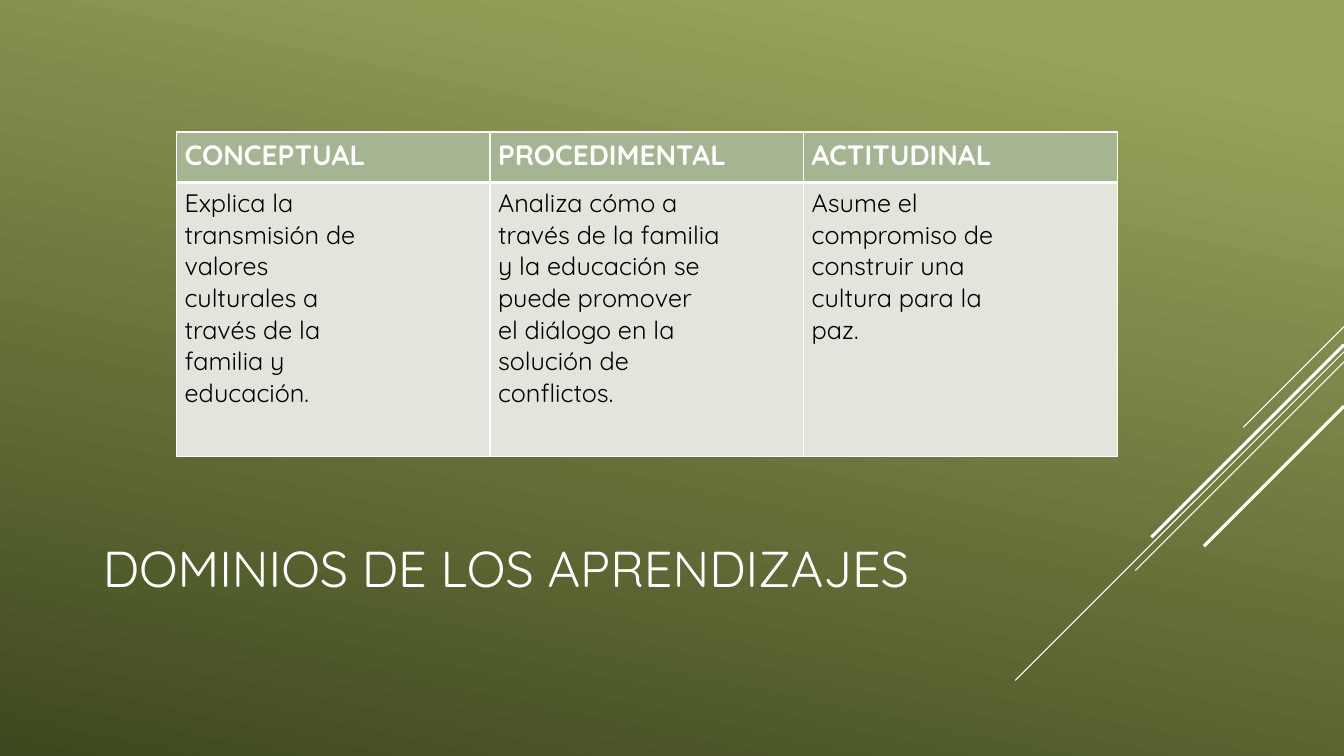
import pptx
import pptx.util
import pptx.dml.color
import pptx.enum.shapes
import pptx.enum.text
import pptx.oxml
import pptx.oxml.ns
from dataclasses import dataclass

TITLE = "DOMINIOS DE LOS APRENDIZAJES"
DOMAINS = {
    "CONCEPTUAL": [
        "Explica la", "transmisión de", "valores", "culturales a",
        "través de la", "familia y", "educación.",
    ],
    "PROCEDIMENTAL": [
        "Analiza cómo a", "través de la familia", "y la educación se",
        "puede promover", "el diálogo en la", "solución de", "conflictos.",
    ],
    "ACTITUDINAL": [
        "Asume el", "compromiso de", "construir una", "cultura para la", "paz.",
    ],
}
# Diagonals: height at the right edge, run down to the left, weight
DIAGONALS = [
    (3.24, 1.00, 0.75),
    (3.49, 3.26, 0.75),
    (3.59, 2.07, 0.75),
    (3.42, 1.91, 2.25),
    (4.03, 1.39, 2.25),
]
WIDTH, HEIGHT = 13.33, 7.5
TITLE_BOX = (0.92, 4.8, 9.33, 1.65)
TABLE_LEFT, TABLE_TOP, COLUMN_WIDTH = 1.75, 1.31, 3.11
ROW_HEIGHTS = (0.5, 2.72)


@dataclass(frozen=True)
class Theme:
    font: str = "Quicksand"
    light: str = "FFFFFF"
    dark: str = "000000"
    header_fill: str = "A5B592"
    body_fill: str = "E1E5DC"
    gradient: tuple = ((0.1, "97A35B"), (1, "3E481E"))
    gradient_angle: int = 258
    title_size: int = 36
    header_size: int = 20
    body_size: int = 18
    thin_border: int = 1
    thick_border: int = 3


THEME = Theme()
inches = pptx.util.Inches
rgb = pptx.dml.color.RGBColor.from_string


def write(frame, lines, size, color, bold=False):
    for index, line in enumerate(lines):
        para = frame.paragraphs[0] if index == 0 else frame.add_paragraph()
        para.alignment = pptx.enum.text.PP_ALIGN.LEFT
        span = para.add_run()
        span.text = line
        span.font.name = THEME.font
        span.font.size = pptx.util.Pt(size)
        span.font.color.rgb = rgb(color)
        span.font.bold = bold


def paint_background(page):
    fill = page.background.fill
    fill.gradient()
    fill.gradient_angle = THEME.gradient_angle
    for stop, (position, color) in zip(fill.gradient_stops, THEME.gradient):
        stop.position = position
        stop.color.rgb = rgb(color)


def add_diagonal(page, top, run, weight):
    line = page.shapes.add_connector(
        pptx.enum.shapes.MSO_CONNECTOR.STRAIGHT,
        inches(WIDTH), inches(top), inches(WIDTH - run), inches(top + run))
    line.line.color.rgb = rgb(THEME.light)
    line.line.width = pptx.util.Pt(weight)
    pptx.oxml.ns.qn("a:effectLst")
    line._element.spPr.append(pptx.oxml.parse_xml(
        f'<a:effectLst {pptx.oxml.ns.nsdecls("a")}/>'))


def set_borders(cell, **weights):
    """Draw the L, R, T and B borders, in that order, at the given points."""
    properties = cell._tc.get_or_add_tcPr()
    for side, weight in weights.items():
        properties.append(pptx.oxml.parse_xml(
            f'<a:ln{side} {pptx.oxml.ns.nsdecls("a")} w="{pptx.util.Pt(weight)}">'
            f'<a:solidFill><a:srgbClr val="{THEME.light}"/></a:solidFill>'
            f'</a:ln{side}>'))


def fill_cell(cell, lines, fill, top, bottom, **text_format):
    set_borders(cell, L=THEME.thin_border, R=THEME.thin_border, T=top, B=bottom)
    cell.fill.solid()
    cell.fill.fore_color.rgb = rgb(fill)
    cell.margin_left = cell.margin_right = inches(0.08)
    cell.margin_top = cell.margin_bottom = inches(0.05)
    write(cell.text_frame, lines, **text_format)


def add_title(page):
    title = page.shapes.title
    title.left, title.top, title.width, title.height = map(inches, TITLE_BOX)
    frame = title.text_frame
    frame.word_wrap = True
    frame.auto_size = pptx.enum.text.MSO_AUTO_SIZE.NONE
    frame.vertical_anchor = pptx.enum.text.MSO_ANCHOR.MIDDLE
    write(frame, [TITLE], THEME.title_size, THEME.light)


def add_domains(page):
    table = page.shapes.add_table(
        len(ROW_HEIGHTS), len(DOMAINS), inches(TABLE_LEFT), inches(TABLE_TOP),
        inches(COLUMN_WIDTH * len(DOMAINS)), inches(sum(ROW_HEIGHTS))).table
    for row, height in zip(table.rows, ROW_HEIGHTS):
        row.height = inches(height)
    thin, thick = THEME.thin_border, THEME.thick_border
    for column, (name, lines) in enumerate(DOMAINS.items()):
        table.columns[column].width = inches(COLUMN_WIDTH)
        fill_cell(table.cell(0, column), [name], THEME.header_fill, thin, thick,
                  size=THEME.header_size, color=THEME.light, bold=True)
        fill_cell(table.cell(1, column), lines, THEME.body_fill, thick, thin,
                  size=THEME.body_size, color=THEME.dark)


def main():
    deck = pptx.Presentation()
    deck.slide_width, deck.slide_height = inches(WIDTH), inches(HEIGHT)
    page = deck.slides.add_slide(deck.slide_layouts.get_by_name("Title Only"))
    paint_background(page)
    for diagonal in DIAGONALS:
        add_diagonal(page, *diagonal)
    add_title(page)
    add_domains(page)
    deck.save("out.pptx")


if __name__ == "__main__":
    main()
